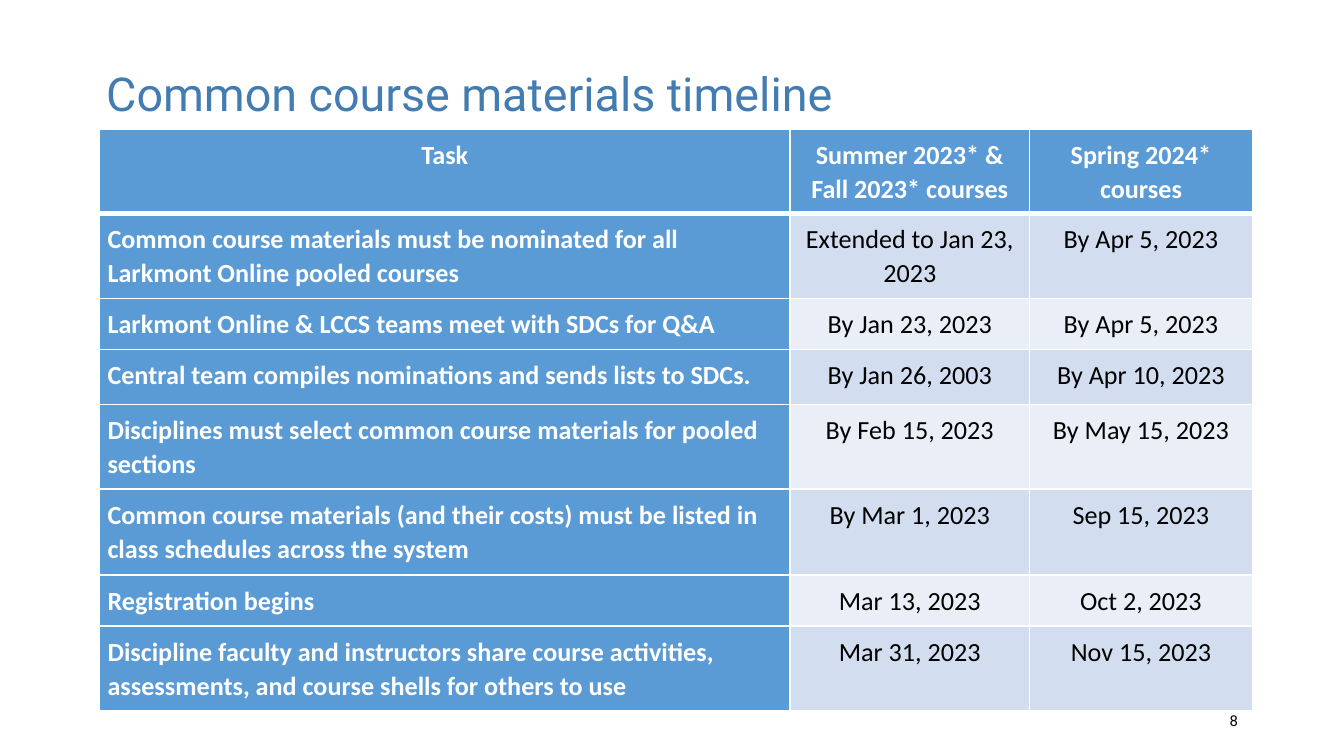
import pptx
import pptx.dml.color
import pptx.enum.text
import pptx.oxml
import pptx.oxml.ns
import pptx.util

COLORS = {
    "title": "427CB1",
    "accent": "5B9BD5",
    "band_dark": "D2DEEF",
    "band_light": "EAEFF7",
    "white": "FFFFFF",
    "black": "000000",
}
GRID_COLUMNS = 100
ALIGN = pptx.enum.text.PP_ALIGN
MIDDLE = pptx.enum.text.MSO_ANCHOR.MIDDLE

# Table measures in grid units
COLUMN_WIDTHS = [51.4, 17.8, 16.6]
ROW_HEIGHTS = [6.3, 6.3, 3.8, 4.1, 6.3, 6.4, 3.8, 6.3]
TIMELINE = [
    ["Task", "Summer 2023* &\nFall 2023* courses", "Spring 2024* courses"],
    ["Common course materials must be nominated for all Larkmont Online pooled courses",
     "Extended to Jan 23, 2023", "By Apr 5, 2023"],
    ["Larkmont Online & LCCS teams meet with SDCs for Q&A",
     "By Jan 23, 2023", "By Apr 5, 2023"],
    ["Central team compiles nominations and sends lists to SDCs.",
     "By Jan 26, 2003", "By Apr 10, 2023"],
    ["Disciplines must select common course materials for pooled sections",
     "By Feb 15, 2023", "By May 15, 2023"],
    ["Common course materials (and their costs) must be listed in class schedules across the system",
     "By Mar 1, 2023", "Sep 15, 2023"],
    ["Registration begins", "Mar 13, 2023", "Oct 2, 2023"],
    ["Discipline faculty and instructors share course activities, assessments, "
     "and course shells for others to use", "Mar 31, 2023", "Nov 15, 2023"],
]


def rgb(name):
    return pptx.dml.color.RGBColor.from_string(COLORS[name])


def write_text(frame, text, font="Roboto", size=14, color="black", bold=False,
               align=ALIGN.LEFT, spacing=1.0):
    """Fill a text frame, one paragraph per line of text."""
    frame.word_wrap = True
    for index, line in enumerate(text.split("\n")):
        paragraph = frame.add_paragraph() if index else frame.paragraphs[0]
        paragraph.alignment = align
        paragraph.line_spacing = spacing
        run = paragraph.add_run()
        run.text = line
        run.font.name = font
        run.font.size = pptx.util.Pt(size)
        run.font.bold = bold
        run.font.color.rgb = rgb(color)


def set_borders(cell, **widths):
    """Draw white cell borders; widths in points, keyed by side tag."""
    properties = cell._tc.get_or_add_tcPr()
    for index, (side, width) in enumerate(widths.items()):
        properties.insert(index, pptx.oxml.parse_xml(
            f'<a:{side} {pptx.oxml.ns.nsdecls("a")} w="{pptx.util.Pt(width)}">'
            f'<a:solidFill><a:srgbClr val="{COLORS["white"]}"/></a:solidFill></a:{side}>'))


class TimelineSlide:
    def __init__(self, presentation):
        self.slide = presentation.slides.add_slide(presentation.slide_layouts[5])
        self.unit = presentation.slide_width / GRID_COLUMNS

    def length(self, units):
        """Turn square grid units into a length."""
        return pptx.util.Emu(round(units * self.unit))

    def title(self, text, *box):
        shape = self.slide.shapes.title
        shape.left, shape.top, shape.width, shape.height = map(self.length, box)
        shape.text_frame.auto_size = pptx.enum.text.MSO_AUTO_SIZE.NONE
        shape.text_frame.vertical_anchor = MIDDLE
        write_text(shape.text_frame, text, size=25, color="title", spacing=0.9)

    def page_number(self, text, *box):
        shape = self.slide.shapes.add_textbox(*map(self.length, box))
        shape.text_frame.vertical_anchor = MIDDLE
        write_text(shape.text_frame, text, size=8, align=ALIGN.RIGHT)

    def table(self, rows, left, top):
        box = left, top, sum(COLUMN_WIDTHS), sum(ROW_HEIGHTS)
        table = self.slide.shapes.add_table(
            len(rows), len(rows[0]), *map(self.length, box)).table
        for column, width in zip(table.columns, COLUMN_WIDTHS):
            column.width = self.length(width)
        for row, height in zip(table.rows, ROW_HEIGHTS):
            row.height = self.length(height)
        for row_index, row in enumerate(rows):
            for column_index, text in enumerate(row):
                self.cell(table.cell(row_index, column_index), text, row_index, column_index)

    def cell(self, cell, text, row, column):
        header, strong = row == 0, row == 0 or column == 0
        band = "band_dark" if row % 2 else "band_light"
        cell.margin_left = cell.margin_right = self.length(0.6)
        cell.margin_top = cell.margin_bottom = self.length(0.6)
        cell.fill.solid()
        cell.fill.fore_color.rgb = rgb("accent" if strong else band)
        set_borders(cell, lnL=1, lnR=1, lnT=3 if row == 1 else 1, lnB=3 if header else 1)
        write_text(cell.text_frame, text, font="Calibri", bold=strong,
                   color="white" if strong else "black", spacing=1.07,
                   align=ALIGN.CENTER if header or column else ALIGN.LEFT)


def main():
    presentation = pptx.Presentation()
    presentation.slide_width = pptx.util.Inches(10)
    presentation.slide_height = presentation.slide_width * 9 // 16
    timeline = TimelineSlide(presentation)
    timeline.title("Common course materials timeline", 6.9, 3, 86.2, 8.4)
    timeline.page_number("8", 70.6, 52.1, 22.5, 3)
    timeline.table(TIMELINE, 7.4, 9.6)
    presentation.save("out.pptx")


if __name__ == "__main__":
    main()
